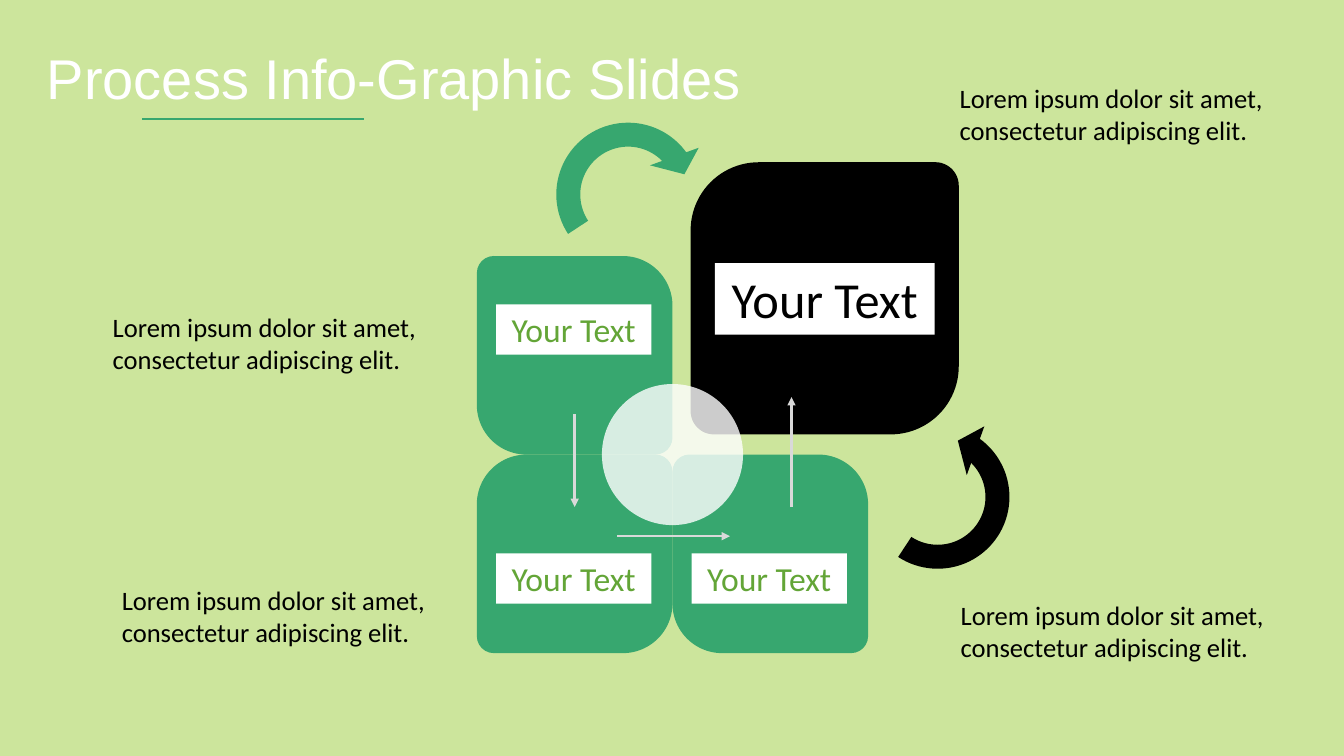
from lxml import etree
from pptx import Presentation
from pptx.dml.color import RGBColor
from pptx.enum.shapes import MSO_CONNECTOR, MSO_SHAPE
from pptx.enum.text import MSO_ANCHOR, MSO_AUTO_SIZE, PP_ALIGN
from pptx.oxml.ns import qn
from pptx.util import Inches, Pt

PETAL = MSO_SHAPE.ROUND_2_DIAG_RECTANGLE
ARC = MSO_SHAPE.CIRCULAR_ARROW
RECT = MSO_SHAPE.RECTANGLE
OVAL = MSO_SHAPE.OVAL
STRAIGHT = MSO_CONNECTOR.STRAIGHT
LEFT, CENTER = PP_ALIGN.LEFT, PP_ALIGN.CENTER

COLORS = {
    "background": "CCE59C",
    "green": "37A76F",
    "label": "63A537",
    "black": "000000",
    "white": "FFFFFF",
    "gray": "D9D9D9",
}

# Content
TITLE = "Process Info-Graphic Slides"
LABEL = "Your Text"
NOTE = "Lorem ipsum dolor sit amet, consectetur adipiscing elit."

SMALL_PETAL = (1.94, 1.97)
LARGE_PETAL = (2.66, 2.7)
PETAL_CORNERS = (0.087, 0.254)
# left, top, size, colour, flipped
PETALS = [
    (4.73, 2.54, SMALL_PETAL, "green", False),
    (4.73, 4.51, SMALL_PETAL, "green", True),
    (6.85, 1.61, LARGE_PETAL, "black", True),
    (6.67, 4.51, SMALL_PETAL, "green", False),
]
SMALL_LABEL = (1.54, 0.5)
LARGE_LABEL = (2.18, 0.71)
# left, top, size, points, colour
LABELS = [
    (4.92, 3.02, SMALL_LABEL, 24, "label"),
    (4.92, 5.49, SMALL_LABEL, 24, "label"),
    (6.86, 5.49, SMALL_LABEL, 24, "label"),
    (7.09, 2.61, LARGE_LABEL, 36, "black"),
]
FLOW_ARROWS = [
    ((5.7, 4.11), (5.7, 5.03)),
    ((6.12, 5.32), (7.24, 5.32)),
    ((7.85, 5.03), (7.85, 3.94)),
]
ARC_SIZE = (1.7, 1.7)
ARC_BENDS = (0.14, 11.744, 192.391, 88.006, 0.151)
# left, top, colour, flipped, rotation
ARCS = [
    (5.38, 1.08, "green", False, 0),
    (8.45, 4.08, "black", True, 90),
]
NOTE_SIZE = (3.46, 0.74)
NOTES = [(1.02, 3.04), (1.11, 5.74), (9.42, 0.76), (9.43, 5.89)]


def color(name):
    return RGBColor.from_string(COLORS[name])


def add_filled(page, kind, left, top, size, fill, bends=(), flipped=False):
    shape = page.shapes.add_shape(kind, Inches(left), Inches(top), *map(Inches, size))
    shape.shadow.inherit = False
    shape.fill.solid()
    shape.fill.fore_color.rgb = color(fill)
    shape.line.fill.background()
    for index, bend in enumerate(bends):
        shape.adjustments[index] = bend
    if flipped:
        shape._element.spPr.find(qn("a:xfrm")).set("flipH", "1")
    return shape


def write(box, text, points, font, fill, align):
    frame = box.text_frame
    frame.word_wrap = True
    frame.auto_size = MSO_AUTO_SIZE.SHAPE_TO_FIT_TEXT
    frame.vertical_anchor = MSO_ANCHOR.TOP
    para = frame.paragraphs[0]
    para.alignment = align
    span = para.add_run()
    span.text = text
    span.font.size = Pt(points)
    span.font.name = font
    span.font.color.rgb = color(fill)


def add_text(page, left, top, size, *style):
    box = page.shapes.add_textbox(Inches(left), Inches(top), *map(Inches, size))
    write(box, *style)


def add_line(page, start, end, stroke, points, arrow=False):
    line = page.shapes.add_connector(STRAIGHT, *map(Inches, start + end))
    line.line.color.rgb = color(stroke)
    line.line.width = Pt(points)
    if arrow:
        etree.SubElement(line.line._get_or_add_ln(), qn("a:tailEnd"), type="triangle")
    etree.SubElement(line._element.spPr, qn("a:effectLst"))


def main():
    deck = Presentation()
    deck.slide_width, deck.slide_height = Inches(13.33), Inches(7.5)
    page = deck.slides.add_slide(deck.slide_layouts[6])
    page.background.fill.solid()
    page.background.fill.fore_color.rgb = color("background")

    # Petals and the translucent hub
    for left, top, size, fill, flipped in PETALS:
        add_filled(page, PETAL, left, top, size, fill, PETAL_CORNERS, flipped)
    hub = add_filled(page, OVAL, 5.97, 3.81, (1.4, 1.4), "white")
    hub_color = hub._element.spPr.find(qn("a:solidFill"))[0]
    etree.SubElement(hub_color, qn("a:alpha"), val="80000")

    # Petal labels
    for left, top, size, points, fill in LABELS:
        label = add_filled(page, RECT, left, top, size, "white")
        write(label, LABEL, points, "Calibri", fill, CENTER)

    # Title
    add_text(page, 0.07, 0.38, (7.67, 0.77), TITLE, 40, "Arial", "white", CENTER)

    # Arrows between petals
    for start, end in FLOW_ARROWS:
        add_line(page, start, end, "gray", 1.75, arrow=True)
    for left, top, fill, flipped, rotation in ARCS:
        arc = add_filled(page, ARC, left, top, ARC_SIZE, fill, ARC_BENDS, flipped)
        arc.rotation = rotation

    # Notes around the petals
    for left, top in NOTES:
        add_text(page, left, top, NOTE_SIZE, NOTE, 19, "Calibri", "black", LEFT)

    # Title underline
    add_line(page, (1.41, 1.18), (3.61, 1.18), "green", 1.5)

    deck.save("out.pptx")


if __name__ == "__main__":
    main()
